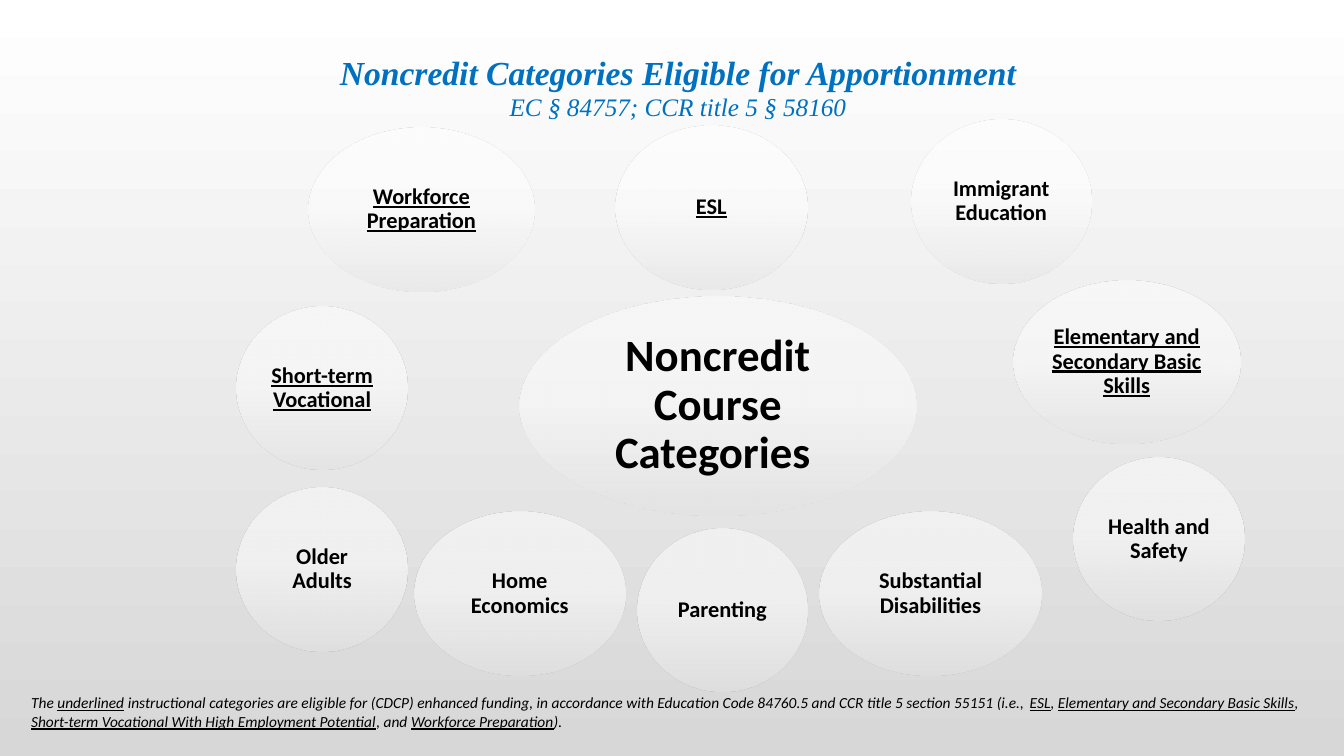
from dataclasses import dataclass

import lxml.etree
import pptx
import pptx.dml.color
import pptx.enum.shapes
import pptx.enum.text
import pptx.oxml.ns
import pptx.util
from pptx.util import Inches


@dataclass(frozen=True)
class Theme:
    body_font: str = "Calibri"
    title_font: str = "Times New Roman"
    text_color: str = "000000"
    title_color: str = "0070C0"
    background: tuple[str, ...] = ("FFFFFF", "D7D7D7")
    bubble: tuple[str, ...] = ("FFFFFF", "FFFFFF", "E3E3E3")
    bubble_opacity: int = 50
    title_size: int = 24
    subtitle_size: int = 18
    center_size: int = 32
    category_size: int = 16
    note_size: int = 11


@dataclass(frozen=True)
class Bubble:
    text: str
    left: float
    top: float
    width: float = 1.69
    height: float = 1.62
    underlined: bool = False
    size: int = Theme.category_size
    inset: float = 0.02


THEME = Theme()

BUBBLES = [
    Bubble("Noncredit Course Categories ", 5.15, 2.94, 3.94, 2.17,
           size=THEME.center_size, inset=0.04),
    Bubble("ESL", 6.1, 1.25, 1.91, underlined=True),
    Bubble("Immigrant Education", 9.04, 1.19, 1.78),
    Bubble("Elementary and Secondary Basic Skills", 10.05, 2.78, 2.25, underlined=True),
    Bubble("Health and Safety", 10.65, 4.54),
    Bubble("Substantial Disabilities", 8.13, 5.08, 2.2),
    Bubble("Parenting", 6.32, 5.24),
    Bubble("Home Economics", 4.11, 5.08, 2.09),
    Bubble("Older Adults", 2.35, 4.84),
    Bubble("Short-term Vocational", 2.35, 3.04, underlined=True),
    Bubble("Workforce Preparation", 3.06, 1.27, 2.24, underlined=True),
]

# Plain and underlined pieces alternate, starting with a plain one.
NOTE_PIECES = [
    "The ", "underlined",
    " instructional categories are eligible for (CDCP) enhanced funding, in accordance "
    "with Education Code 84760.5 and CCR title 5 section 55151 (i.e., ", "ESL",
    ", ", "Elementary and Secondary Basic Skills",
    ", ", "Short-term Vocational With High Employment Potential",
    ", and ", "Workforce Preparation", ").",
]


def set_gradient(fill: pptx.dml.fill.FillFormat, element: lxml.etree._Element,
                 colors: tuple[str, ...], opacity: int = 100) -> None:
    """Fill from top to bottom with evenly spaced stops."""
    fill.gradient()
    fill.gradient_angle = 270
    qn = pptx.oxml.ns.qn
    stops = element.find(".//" + qn("a:gsLst"))
    for stop in list(stops):
        stops.remove(stop)
    for index, color in enumerate(colors):
        position = 100000 * index // (len(colors) - 1)
        stop = lxml.etree.SubElement(stops, qn("a:gs"), pos=str(position))
        rgb = lxml.etree.SubElement(stop, qn("a:srgbClr"), val=color)
        if opacity < 100:
            lxml.etree.SubElement(rgb, qn("a:alpha"), val=str(opacity * 1000))


def set_font(font: pptx.text.text.Font, name: str, size: int, color: str,
             bold: bool = False, italic: bool = False) -> None:
    font.name = name
    font.size = pptx.util.Pt(size)
    font.color.rgb = pptx.dml.color.RGBColor.from_string(color)
    font.bold = bold
    font.italic = italic


def add_title(slide: pptx.slide.Slide) -> None:
    title = slide.shapes.title
    title.left, title.top = Inches(2.35), Inches(0.46)
    title.width, title.height = Inches(8.75), Inches(0.81)
    frame = title.text_frame
    frame.text = ("Noncredit Categories Eligible for Apportionment\n"
                  "EC § 84757; CCR title 5 § 58160")
    frame.word_wrap = True
    frame.auto_size = pptx.enum.text.MSO_AUTO_SIZE.SHAPE_TO_FIT_TEXT
    frame.vertical_anchor = pptx.enum.text.MSO_ANCHOR.TOP
    heading, subtitle = frame.paragraphs
    for paragraph, size, bold in ((heading, THEME.title_size, True),
                                  (subtitle, THEME.subtitle_size, False)):
        paragraph.alignment = pptx.enum.text.PP_ALIGN.CENTER
        set_font(paragraph.font, THEME.title_font, size, THEME.title_color, bold, True)


def add_bubble(slide: pptx.slide.Slide, bubble: Bubble) -> None:
    shape = slide.shapes.add_shape(
        pptx.enum.shapes.MSO_SHAPE.OVAL, Inches(bubble.left), Inches(bubble.top),
        Inches(bubble.width), Inches(bubble.height))
    shape.shadow.inherit = False
    shape.line.fill.background()
    set_gradient(shape.fill, shape.element, THEME.bubble, THEME.bubble_opacity)
    frame = shape.text_frame
    frame.word_wrap = True
    frame.vertical_anchor = pptx.enum.text.MSO_ANCHOR.MIDDLE
    frame.margin_left = frame.margin_right = Inches(bubble.inset)
    frame.margin_top = frame.margin_bottom = Inches(bubble.inset)
    frame.text = bubble.text
    paragraph = frame.paragraphs[0]
    paragraph.alignment = pptx.enum.text.PP_ALIGN.CENTER
    paragraph.line_spacing = 0.9
    set_font(paragraph.font, THEME.body_font, bubble.size, THEME.text_color, bold=True)
    paragraph.font.underline = bubble.underlined


def add_note(slide: pptx.slide.Slide) -> None:
    box = slide.shapes.add_textbox(Inches(0.21), Inches(6.83), Inches(12.8), Inches(0.47))
    frame = box.text_frame
    frame.word_wrap = True
    frame.auto_size = pptx.enum.text.MSO_AUTO_SIZE.SHAPE_TO_FIT_TEXT
    paragraph = frame.paragraphs[0]
    set_font(paragraph.font, THEME.body_font, THEME.note_size, THEME.text_color, italic=True)
    for index, text in enumerate(NOTE_PIECES):
        run = paragraph.add_run()
        run.text = text
        run.font.underline = index % 2 == 1


def main() -> None:
    presentation = pptx.Presentation()
    presentation.slide_width = Inches(13.33)
    presentation.slide_height = Inches(7.5)
    slide = presentation.slides.add_slide(presentation.slide_layouts.get_by_name("Title Only"))
    set_gradient(slide.background.fill, slide.element, THEME.background)
    add_title(slide)
    for bubble in BUBBLES:
        add_bubble(slide, bubble)
    add_note(slide)
    presentation.save("out.pptx")


if __name__ == "__main__":
    main()
